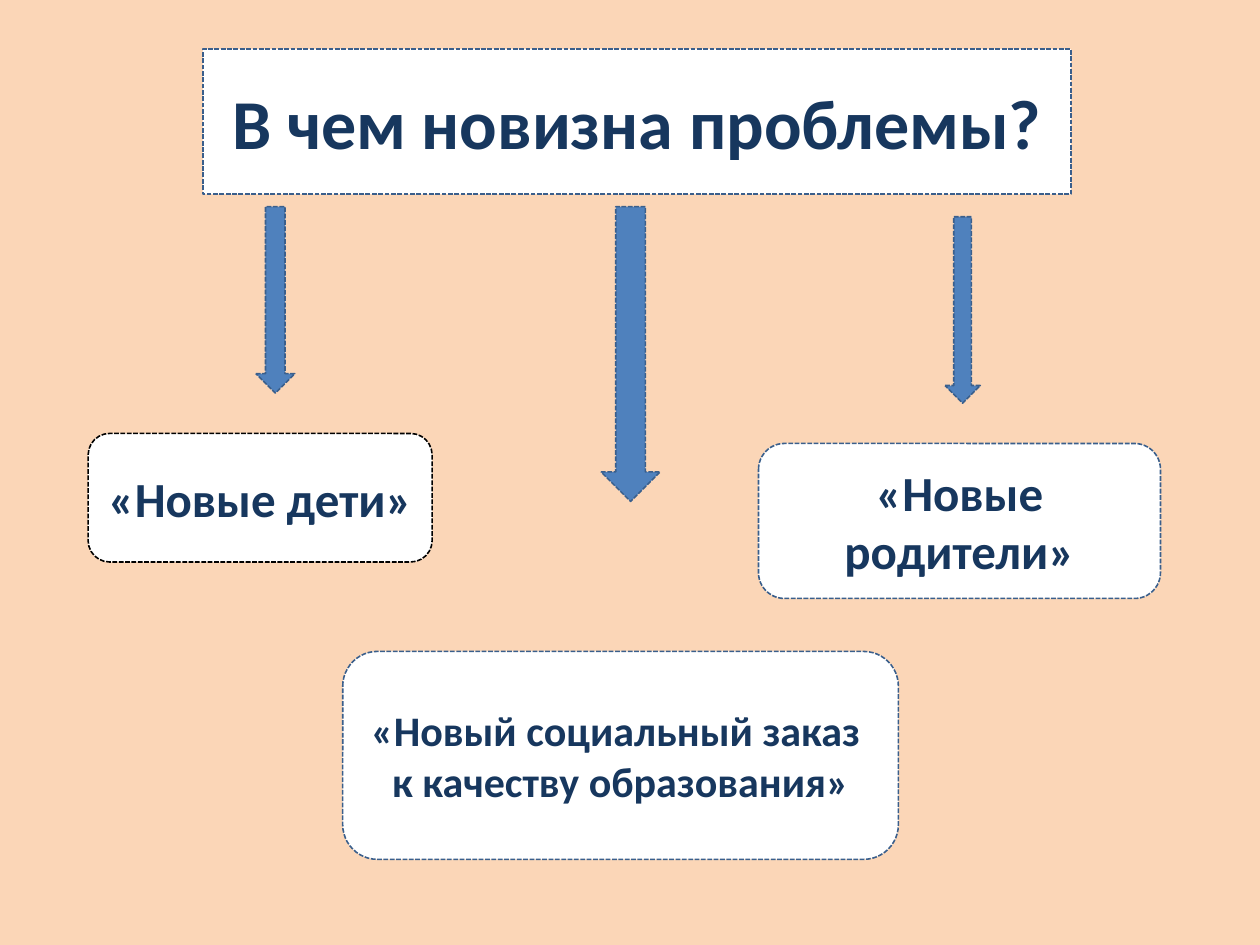
from pptx import Presentation
from pptx.dml.color import RGBColor
from pptx.enum.dml import MSO_LINE_DASH_STYLE as Dash
from pptx.enum.shapes import MSO_SHAPE as Shape
from pptx.enum.text import MSO_ANCHOR as Anchor, MSO_AUTO_SIZE as AutoSize, PP_ALIGN as Align
from pptx.oxml import parse_xml
from pptx.oxml.ns import nsdecls
from pptx.util import Inches, Pt

PEACH, WHITE, BLUE = "FBD6B7", "FFFFFF", "4F81BD"
OUTLINE, BLACK, NAVY = "3A5F8C", "000000", "17375E"

TITLE = ("В чем новизна проблемы?", (1.61, 0.39, 6.89, 1.15))
ARROWS = [(2.03, 1.64, 0.31, 1.48), (4.77, 1.64, 0.47, 2.34), (7.5, 1.72, 0.28, 1.48)]
ANSWERS = [
    (["«Новые дети»"], (0.7, 3.44, 2.73, 1.02), 28, BLACK),
    (["«Новый социальный заказ ", "к качеству образования»"], (2.72, 5.17, 4.41, 1.65), 24, OUTLINE),
    (["«Новые родители»"], (6.02, 3.52, 3.19, 1.23), 28, OUTLINE),
]


def color(hex_code):
    return RGBColor.from_string(hex_code)


def style_shape(shape, fill, line=OUTLINE):
    shape.shadow.inherit = False
    shape.fill.solid()
    shape.fill.fore_color.rgb = color(fill)
    shape.line.color.rgb = color(line)
    shape.line.width = Pt(0.9)
    shape.line.dash_style = Dash.SQUARE_DOT


def write_text(shape, lines, size, font="Calibri", ink=NAVY, bold=True):
    frame = shape.text_frame
    frame.word_wrap = True
    frame.auto_size = AutoSize.NONE
    frame.vertical_anchor = Anchor.MIDDLE
    for index, line in enumerate(lines):
        para = frame.add_paragraph() if index else frame.paragraphs[0]
        para.alignment = Align.CENTER
        span = para.add_run()
        span.text = line
        span.font.name, span.font.size, span.font.bold = font, Pt(size), bold
        span.font.color.rgb = color(ink)


def add_title(page, text, area):
    title = page.shapes.title
    title.left, title.top, title.width, title.height = map(Inches, area)
    title._element.spPr.append(
        parse_xml(f'<a:prstGeom {nsdecls("a")} prst="roundRect"><a:avLst/></a:prstGeom>'))
    style_shape(title, WHITE)
    write_text(title, [text], 40)


def main():
    """Build the slide that links the question to its three answers."""
    deck = Presentation()
    deck.slide_width, deck.slide_height = Inches(10), Inches(7.5)
    page = deck.slides.add_slide(deck.slide_layouts[5])
    page.background.fill.solid()
    page.background.fill.fore_color.rgb = color(PEACH)

    add_title(page, *TITLE)
    for area in ARROWS:
        arrow = page.shapes.add_shape(Shape.DOWN_ARROW, *map(Inches, area))
        style_shape(arrow, BLUE)
    for lines, area, size, line_color in ANSWERS:
        box = page.shapes.add_shape(Shape.ROUNDED_RECTANGLE, *map(Inches, area))
        style_shape(box, WHITE, line_color)
        write_text(box, lines, size)

    deck.save("out.pptx")


if __name__ == "__main__":
    main()
